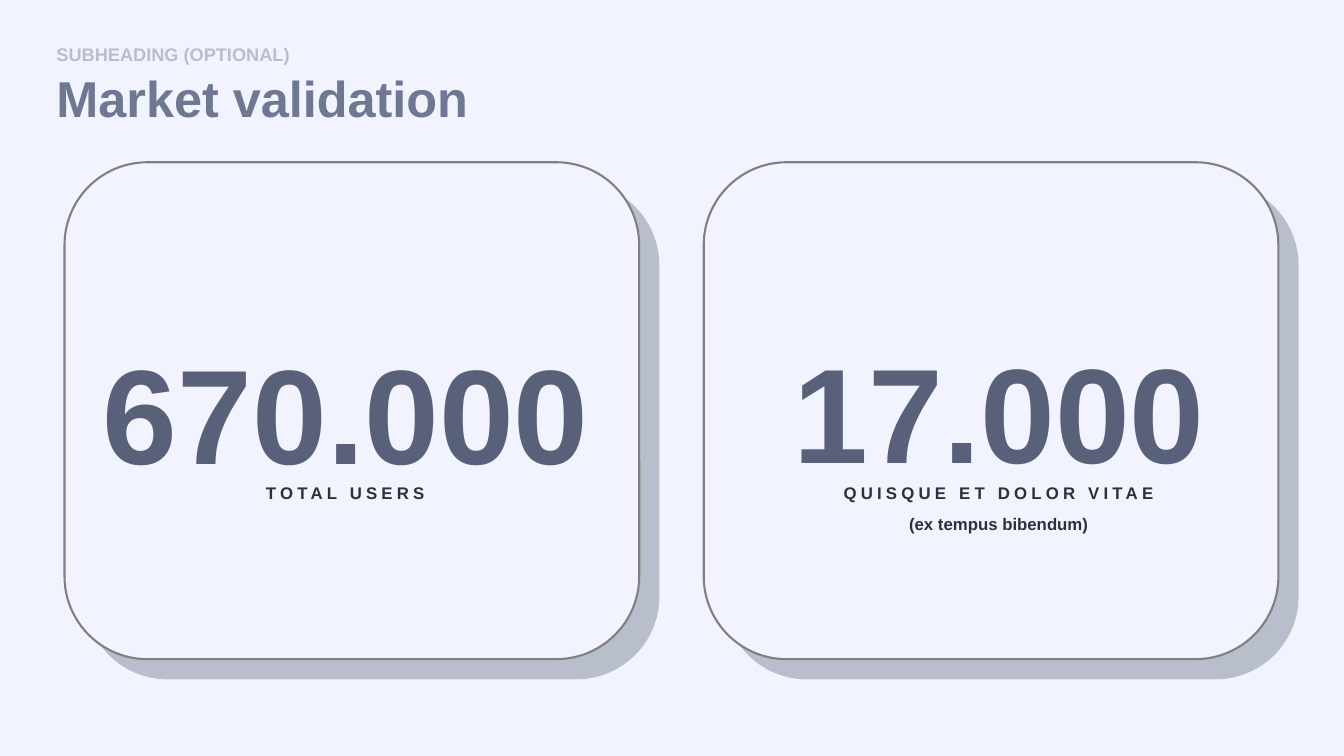
from lxml import etree
from pptx import Presentation
from pptx.dml.color import RGBColor
from pptx.enum.shapes import MSO_SHAPE
from pptx.enum.text import MSO_ANCHOR, MSO_AUTO_SIZE, PP_ALIGN
from pptx.oxml.ns import qn
from pptx.util import Inches, Pt

ROUNDED = MSO_SHAPE.ROUNDED_RECTANGLE
TOP = MSO_ANCHOR.TOP
NO_AUTOFIT = MSO_AUTO_SIZE.NONE
LEFT, CENTER = PP_ALIGN.LEFT, PP_ALIGN.CENTER


def color(hex_value):
    return RGBColor.from_string(hex_value)


def write(shape, text, size, ink, align=LEFT, line_spacing=0.9, tracking=0, inset_top=0.05):
    frame = shape.text_frame
    frame.word_wrap = True
    frame.auto_size = NO_AUTOFIT
    frame.vertical_anchor = TOP
    frame.margin_left = frame.margin_right = Inches(0.1)
    frame.margin_top, frame.margin_bottom = Inches(inset_top), Inches(0.05)
    paragraph = frame.paragraphs[0]
    paragraph.alignment = align
    paragraph.line_spacing = line_spacing
    paragraph.space_before = paragraph.space_after = Pt(0)
    properties = paragraph._p.get_or_add_pPr()
    properties.set("marL", "0")
    properties.set("indent", "0")
    etree.SubElement(properties, qn("a:buNone"))
    run = paragraph.add_run()
    run.text = text
    run.font.name = "Arial"
    run.font.size = Pt(size)
    run.font.bold = True
    run.font.color.rgb = color(ink)
    if tracking:
        run.font._element.set("spc", str(tracking * 100))


class MetricsSlide:
    BACKGROUND = "F1F4FF"
    SHADE = "B9BECC"
    OUTLINE = "808080"
    HEADING = "6E7893"
    FIGURE = "586179"
    CAPTION = "2C303C"
    CARD_SIZE = (5.7, 4.93)
    SHADE_OFFSET = 0.2

    def __init__(self, deck):
        self.slide = deck.slides.add_slide(deck.slide_layouts.get_by_name("Comparison"))
        fill = self.slide.background.fill
        fill.solid()
        fill.fore_color.rgb = color(self.BACKGROUND)
        self.title = self.slide.shapes.title
        self.bodies = iter([p for p in self.slide.placeholders if p.placeholder_format.idx])

    def panel(self, left, top, fill, line=None):
        panel = self.slide.shapes.add_shape(
            ROUNDED, Inches(left), Inches(top), *map(Inches, self.CARD_SIZE))
        panel.shadow.inherit = False
        panel.fill.solid()
        panel.fill.fore_color.rgb = color(fill)
        if line:
            panel.line.color.rgb = color(line)
            panel.line.width = Pt(1.5)
        else:
            panel.line.fill.background()

    def card(self, left, top):
        self.panel(left + self.SHADE_OFFSET, top + self.SHADE_OFFSET, self.SHADE)
        self.panel(left, top, self.BACKGROUND, self.OUTLINE)

    def place(self, placeholder, box, text, size, ink, **style):
        placeholder.left, placeholder.top, placeholder.width, placeholder.height = map(Inches, box)
        placeholder.element.getparent().append(placeholder.element)
        write(placeholder, text, size, ink, **style)

    def heading(self, box, text):
        self.place(self.title, box, text, 36, self.HEADING)

    def body(self, box, text, size, ink, **style):
        self.place(next(self.bodies), box, text, size, ink, **style)

    def note(self, box, text, size, ink, **style):
        write(self.slide.shapes.add_textbox(*map(Inches, box)), text, size, ink, **style)


def main():
    deck = Presentation()
    deck.slide_width, deck.slide_height = Inches(13.33), Inches(7.5)
    page = MetricsSlide(deck)

    for card_left in (6.98, 0.64):
        page.card(card_left, 1.61)

    page.heading((0.46, 0.68, 12.31, 0.87), "Market validation")
    page.body((0.46, 0.4, 6.21, 0.22), "SUBHEADING (OPTIONAL)", 13, page.SHADE)

    figure_style = dict(size=96, ink=page.FIGURE, align=CENTER, line_spacing=1.0, inset_top=0.42)
    page.body((0.67, 2.85, 5.52, 1.6), "670.000", **figure_style)
    page.note((7.15, 2.85, 5.52, 1.6), "17.000", **figure_style)

    caption_style = dict(size=12, ink=page.CAPTION, align=CENTER)
    for caption_left, caption in ((1.4, "TOTAL USERS"), (7.88, "QUISQUE ET DOLOR VITAE")):
        page.body((caption_left, 4.76, 4.05, 0.4), caption, tracking=3, **caption_style)
    page.note((7.88, 5.07, 4.05, 0.4), "(ex tempus bibendum)", **caption_style)

    deck.save("out.pptx")


if __name__ == "__main__":
    main()
